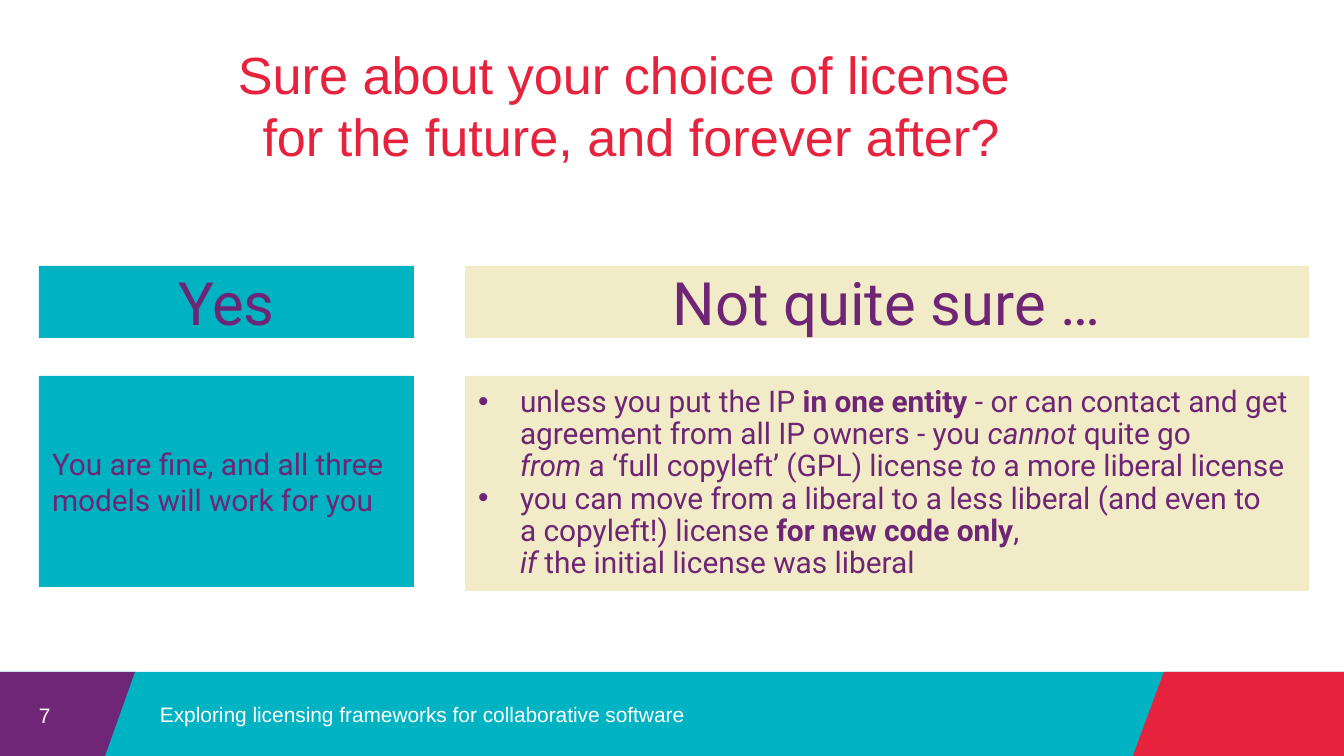
from lxml import etree
from pptx import Presentation
from pptx import util as u
from pptx.dml.color import RGBColor
from pptx.enum import shapes, text
from pptx.oxml.ns import qn

PX = 914400 / 134.4
COLORS = {
    "teal": "00B3C3",
    "purple": "702677",
    "ink": "6F2575",
    "red": "E6223D",
    "cream": "F1ECC7",
    "white": "FFFFFF",
}
LEFT, CENTER = text.PP_ALIGN.LEFT, text.PP_ALIGN.CENTER
POINTS = [
    [("unless you put the IP ", ""), ("in one entity ", "b"),
     ("- or can contact and get agreement from all IP owners - you ", ""),
     ("cannot ", "i"), ("quite go \n", ""), ("from ", "i"),
     ("a ‘full copyleft’ (GPL) license ", ""), ("to ", "i"),
     ("a more liberal license", "")],
    [("you can move from a liberal to a less liberal (and even to \na copyleft!) license ", ""),
     ("for new code only", "b"), (", \n", ""), ("if ", "i"),
     ("the initial license was liberal", "")],
]


def px(length):
    """Turn pixels into EMU."""
    return u.Emu(round(length * PX))


def rgb(name):
    """Return a named colour."""
    return RGBColor.from_string(COLORS[name])


def place(shape, left, top, width, height):
    """Move and size a shape in pixels."""
    shape.left, shape.top = px(left), px(top)
    shape.width, shape.height = px(width), px(height)


def paint(shape, color):
    """Fill a shape without outline or shadow."""
    shape.fill.solid()
    shape.fill.fore_color.rgb = rgb(color)
    shape.line.fill.background()
    shape.shadow.inherit = False


def set_frame(shape, side, edge, wrap=True):
    """Set wrapping, middle anchor and insets, and return the text frame."""
    frame = shape.text_frame
    frame.word_wrap = wrap
    frame.auto_size = text.MSO_AUTO_SIZE.NONE
    frame.vertical_anchor = text.MSO_ANCHOR.MIDDLE
    frame.margin_left = frame.margin_right = px(side)
    frame.margin_top = frame.margin_bottom = px(edge)
    return frame


def style(para, size, color, font="Arial", align=LEFT):
    """Format a whole paragraph."""
    para.alignment = align
    para.font.size = u.Pt(size)
    para.font.name = font
    para.font.color.rgb = rgb(color)


def add_band(page, color, bounds):
    """Add a plain filled rectangle."""
    band = page.shapes.add_shape(shapes.MSO_SHAPE.RECTANGLE, 0, 0, 0, 0)
    place(band, *bounds)
    paint(band, color)
    return band


def add_slant(page, color, corners):
    """Add a filled polygon."""
    builder = page.shapes.build_freeform(*corners[0], scale=PX)
    builder.add_line_segments(corners[1:])
    paint(builder.convert_to_shape(), color)


def add_panel(page, color, bounds, words, size, align):
    """Add a filled rectangle with one paragraph."""
    para = set_frame(add_band(page, color, bounds), 13, 0).paragraphs[0]
    para.text = words
    style(para, size, "ink", "Roboto", align)


def add_label(page, bounds, words, side, wrap=True):
    """Add a small white footer text."""
    box = page.shapes.add_textbox(0, 0, 0, 0)
    place(box, *bounds)
    para = set_frame(box, side, 0, wrap).paragraphs[0]
    para.text = words
    style(para, 11.2, "white")


def add_bullet(para):
    """Give a paragraph a hanging bullet."""
    props = para._p.get_or_add_pPr()
    props.set("marL", str(px(42)))
    props.set("indent", str(-px(42)))
    etree.SubElement(props, qn("a:buFont")).set("typeface", "Arial")
    etree.SubElement(props, qn("a:buChar")).set("char", "•")


def add_span(para, words, emphasis):
    """Add text with optional bold or italic and its line breaks."""
    for number, line in enumerate(words.split("\n")):
        if number:
            para.add_line_break()
        if line:
            span = para.add_run()
            span.text = line
            if emphasis == "b":
                span.font.bold = True
            elif emphasis == "i":
                span.font.italic = True


def fill_title(title):
    """Place and write the title."""
    place(title, 108, 34, 1046, 141)
    para = set_frame(title, 8, 8).paragraphs[0]
    para.text = "Sure about your choice of license \vfor the future, and forever after?"
    style(para, 28, "red", align=CENTER)


def fill_list(body, bounds):
    """Place and write the bulleted list."""
    place(body, *bounds)
    paint(body, "cream")
    frame = set_frame(body, 13, 0)
    for number, point in enumerate(POINTS):
        para = frame.add_paragraph() if number else frame.paragraphs[0]
        add_bullet(para)
        style(para, 16, "ink", "Roboto")
        para.line_spacing = 0.9
        para.space_before = u.Pt(0)
        for words, emphasis in point:
            add_span(para, words, emphasis)


def add_footer(page):
    """Add the footer band with its slanted ends and texts."""
    add_band(page, "teal", (0, 672, 1344, 84))
    add_slant(page, "purple", [(0, 672), (135, 672), (105, 756), (0, 756)])
    add_slant(page, "red", [(1164, 672), (1344, 672), (1344, 756), (1133, 756)])
    add_label(page, (39, 702, 26, 26), "7", 0, wrap=False)
    add_label(page, (147, 677, 968, 74),
              "Exploring licensing frameworks for collaborative software", 13)


def main():
    """Build the slide."""
    deck = Presentation()
    deck.slide_width, deck.slide_height = px(1344), px(756)
    page = deck.slides.add_slide(deck.slide_layouts[1])
    add_footer(page)
    fill_title(page.shapes.title)
    add_panel(page, "teal", (39, 266, 375, 72), "Yes", 32, CENTER)
    add_panel(page, "teal", (39, 376, 375, 211),
              "You are fine, and all three models will work for you", 16, LEFT)
    add_panel(page, "cream", (465, 266, 844, 72), "Not quite sure …", 32, CENTER)
    fill_list(page.placeholders[1], (465, 376, 844, 215))
    deck.save("out.pptx")


if __name__ == "__main__":
    main()
